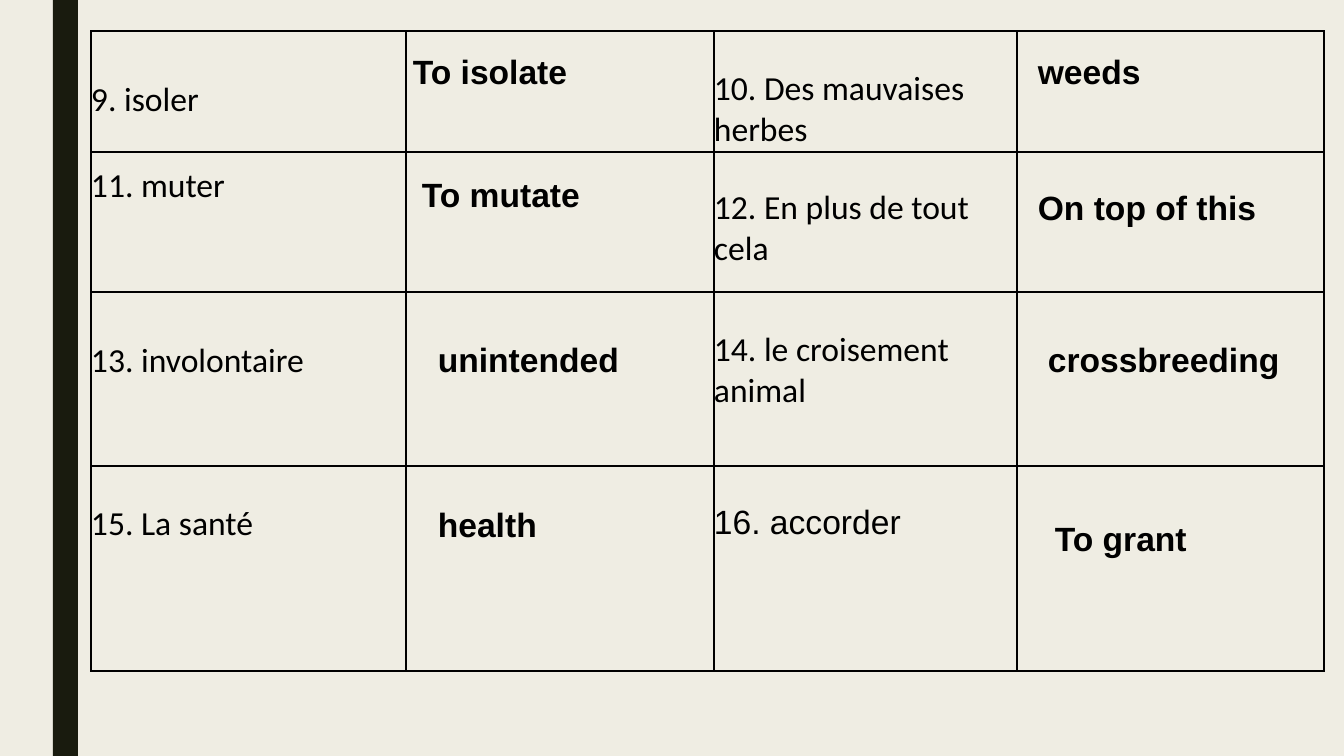
from dataclasses import dataclass

from lxml.etree import SubElement
from pptx import Presentation
from pptx.dml.color import RGBColor
from pptx.enum.shapes import MSO_SHAPE
from pptx.oxml.ns import qn
from pptx.util import Pt

PX = 914400 / 100.8


@dataclass(frozen=True)
class Theme:
    paper: str = "EFEDE3"
    bar: str = "191B0E"
    ink: str = "000000"
    size: int = 24
    border: int = 1
    french_font: str = "Calibri"
    english_font: str = "Arial"


THEME = Theme()
COLUMNS = [315, 308, 303, 307]
ROWS = [121, 140, 174, 205]

# Each row: (text, top margin, font) for the two French columns
FRENCH = [
    [("9. isoler", 49, THEME.french_font),
     ("10. Des mauvaises herbes", 38, THEME.french_font)],
    [("11. muter", 14, THEME.french_font),
     ("12. En plus de tout cela", 36, THEME.french_font)],
    [("13. involontaire", 49, THEME.french_font),
     ("14. le croisement animal", 38, THEME.french_font)],
    [("15. La santé", 38, THEME.french_font),
     ("16. accorder", 38, THEME.english_font)],
]

# Answers: text and box, relative to the table's corner
ENGLISH = [
    ("To isolate", (312, 15, 244, 92)),
    ("weeds", (937, 15, 244, 92)),
    ("To mutate", (321, 138, 244, 92)),
    ("On top of this", (937, 151, 244, 92)),
    ("unintended", (337, 303, 294, 50)),
    ("crossbreeding", (947, 303, 287, 50)),
    ("health", (337, 468, 294, 132)),
    ("To grant", (954, 482, 244, 50)),
]


def px(*lengths):
    return [round(length * PX) for length in lengths]


def apply(target, values):
    for name, value in values.items():
        setattr(target, name, value)


def write(frame, text, font, bold=False):
    span = frame.paragraphs[0].add_run()
    span.text = text
    apply(span.font, {"name": font, "size": Pt(THEME.size), "bold": bold})
    span.font.color.rgb = RGBColor.from_string(THEME.ink)


def border_cell(cell):
    properties = cell._tc.get_or_add_tcPr()
    for position, side in enumerate(("a:lnL", "a:lnR", "a:lnT", "a:lnB")):
        line = SubElement(properties, qn(side), w=str(Pt(THEME.border)))
        fill = SubElement(line, qn("a:solidFill"))
        SubElement(fill, qn("a:srgbClr"), val=THEME.ink)
        properties.insert(position, line)


def add_side_bar(page, box):
    bar = page.shapes.add_shape(MSO_SHAPE.RECTANGLE, *px(*box))
    bar.shadow.inherit = False
    bar.fill.solid()
    bar.fill.fore_color.rgb = RGBColor.from_string(THEME.bar)
    bar.line.fill.background()


def add_vocabulary_table(page, box):
    table = page.shapes.add_table(len(ROWS), len(COLUMNS), *px(*box)).table
    apply(table, {"first_row": False, "horz_banding": False})
    for column, width in zip(table.columns, px(*COLUMNS)):
        column.width = width
    for row, height in zip(table.rows, px(*ROWS)):
        row.height = height
    for cell in table.iter_cells():
        apply(cell, {"margin_left": 0, "margin_right": 0,
                     "margin_top": 0, "margin_bottom": 0})
        cell.fill.background()
        border_cell(cell)
    # French terms go in every other column
    for row, terms in enumerate(FRENCH):
        for pair, (text, top, font) in enumerate(terms):
            cell = table.cell(row, 2 * pair)
            cell.margin_top = px(top)[0]
            write(cell.text_frame, text, font)


def add_answers(page, box):
    left, top = box[:2]
    for text, (x, y, width, height) in ENGLISH:
        answer = page.shapes.add_textbox(*px(left + x, top + y, width, height))
        answer.text_frame.word_wrap = True
        write(answer.text_frame, text, THEME.english_font, bold=True)


def main():
    deck = Presentation()
    deck.slide_width, deck.slide_height = px(1344, 756)
    page = deck.slides.add_slide(deck.slide_layouts[6])
    page.background.fill.solid()
    page.background.fill.fore_color.rgb = RGBColor.from_string(THEME.paper)

    add_side_bar(page, (53, 0, 25, 756))
    table_box = (91, 31, sum(COLUMNS), sum(ROWS))
    add_vocabulary_table(page, table_box)
    add_answers(page, table_box)
    deck.save("out.pptx")


if __name__ == "__main__":
    main()
